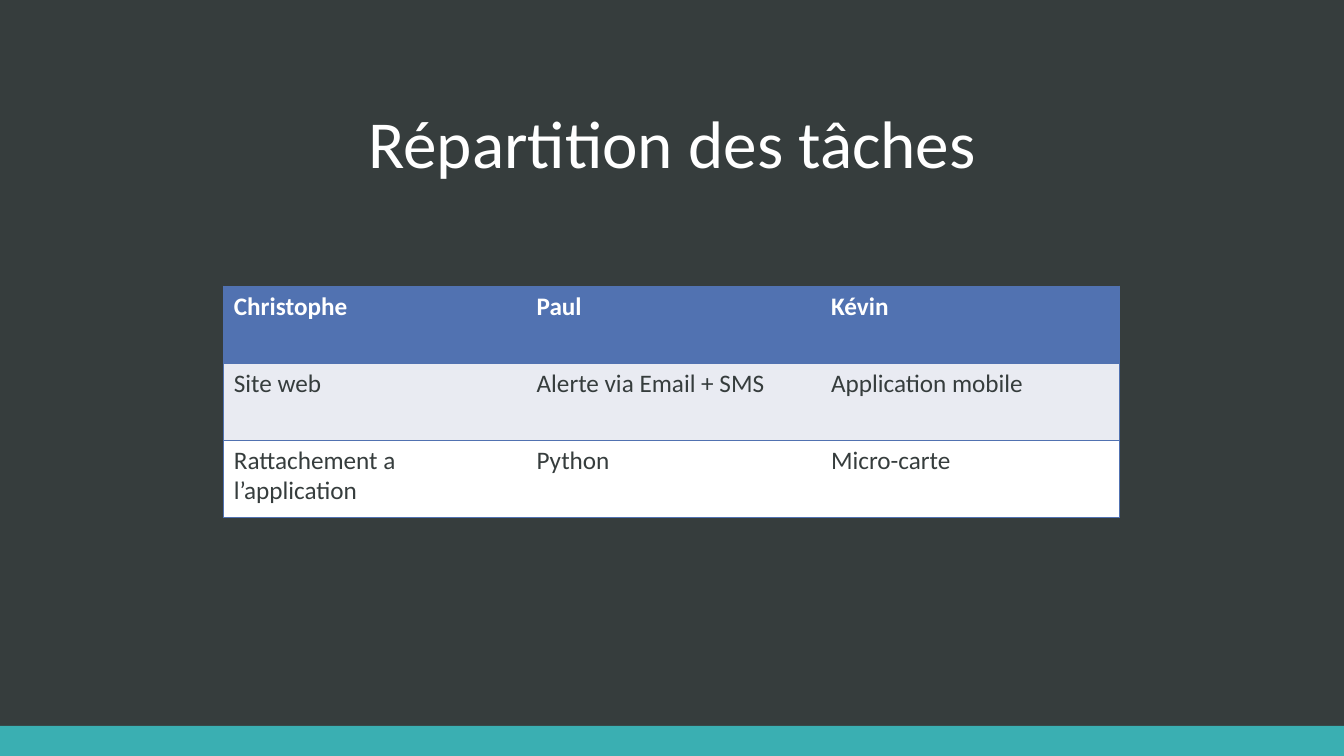
from lxml import etree
from pptx import Presentation
from pptx.dml.color import RGBColor
from pptx.enum.shapes import MSO_SHAPE
from pptx.enum.text import MSO_ANCHOR, PP_ALIGN
from pptx.oxml.ns import qn
from pptx.util import Cm, Pt

RECTANGLE = MSO_SHAPE.RECTANGLE
BOTTOM = MSO_ANCHOR.BOTTOM
CENTER = PP_ALIGN.CENTER

DARK = RGBColor(0x36, 0x3D, 0x3D)
TEAL = RGBColor(0x3A, 0xAF, 0xB2)
BLUE = RGBColor(0x51, 0x72, 0xB1)
PALE = RGBColor(0xE9, 0xEB, 0xF2)
WHITE = RGBColor(0xFF, 0xFF, 0xFF)

SLIDE_WIDTH, SLIDE_HEIGHT = 33.87, 19.05
BAND_HEIGHT = 0.76

TASKS = [
    ["Christophe", "Paul", "Kévin"],
    ["Site web", "Alerte via Email + SMS", "Application mobile"],
    ["Rattachement a l’application", "Python", "Micro-carte"],
]
ROW_STYLES = [(BLUE, WHITE, True), (PALE, DARK, False), (WHITE, DARK, False)]
COLUMN_WIDTHS = [7.63, 7.42, 7.53]
ROW_HEIGHT = 1.94


class SlideBuilder:
    """Holds the style and the current slide."""

    font_name = "Calibri"
    border_color = BLUE
    border_width = Pt(1)

    def __init__(self, slide):
        self.slide = slide

    def background(self, color):
        fill = self.slide.background.fill
        fill.solid()
        fill.fore_color.rgb = color

    def band(self, left, top, width, height, color):
        shape = self.slide.shapes.add_shape(
            RECTANGLE, Cm(left), Cm(top), Cm(width), Cm(height))
        shape.shadow.inherit = False
        shape.fill.solid()
        shape.fill.fore_color.rgb = color
        shape.line.fill.background()

    def run(self, paragraph, text, size, color, bold=False):
        run = paragraph.add_run()
        run.text = text
        run.font.name = self.font_name
        run.font.size = Pt(size)
        run.font.bold = bold
        run.font.color.rgb = color

    def title(self, left, top, width, height, text):
        shape = self.slide.shapes.add_textbox(
            Cm(left), Cm(top), Cm(width), Cm(height))
        frame = shape.text_frame
        frame.word_wrap = True
        frame.vertical_anchor = BOTTOM
        paragraph = frame.paragraphs[0]
        paragraph.alignment = CENTER
        paragraph.line_spacing = 0.9
        self.run(paragraph, text, 48, WHITE)

    def borders(self, cell, visible):
        properties = cell._tc.get_or_add_tcPr()
        for index, side in enumerate("LRTB"):
            line = etree.Element(qn(f"a:ln{side}"), w=str(self.border_width))
            if side in visible:
                fill = etree.SubElement(line, qn("a:solidFill"))
                etree.SubElement(fill, qn("a:srgbClr"), val=str(self.border_color))
            else:
                etree.SubElement(line, qn("a:noFill"))
            properties.insert(index, line)

    def table(self, left, top, rows, widths, row_height, row_styles):
        frame = self.slide.shapes.add_table(
            len(rows), len(widths), Cm(left), Cm(top),
            Cm(sum(widths)), Cm(row_height * len(rows)))
        table = frame.table
        for column, width in zip(table.columns, widths):
            column.width = Cm(width)
        last = len(widths) - 1
        for row, texts, (fill, color, bold) in zip(table.rows, rows, row_styles):
            row.height = Cm(row_height)
            for index, (cell, text) in enumerate(zip(row.cells, texts)):
                cell.fill.solid()
                cell.fill.fore_color.rgb = fill
                self.run(cell.text_frame.paragraphs[0], text, 18, color, bold)
                # Only the outer edges have vertical lines
                outer = {0: "L", last: "R"}.get(index, "")
                self.borders(cell, "TB" + outer)


def main():
    presentation = Presentation()
    presentation.slide_width = Cm(SLIDE_WIDTH)
    presentation.slide_height = Cm(SLIDE_HEIGHT)
    builder = SlideBuilder(
        presentation.slides.add_slide(presentation.slide_layouts[6]))

    # Backdrop and bottom band
    builder.background(DARK)
    builder.band(0, SLIDE_HEIGHT - BAND_HEIGHT, SLIDE_WIDTH, BAND_HEIGHT, TEAL)

    # Title
    builder.title(3.73, 1.3, 26.42, 3.43, "Répartition des tâches")

    # Tasks per person
    builder.table(5.64, 7.21, TASKS, COLUMN_WIDTHS, ROW_HEIGHT, ROW_STYLES)

    presentation.save("out.pptx")


if __name__ == "__main__":
    main()
